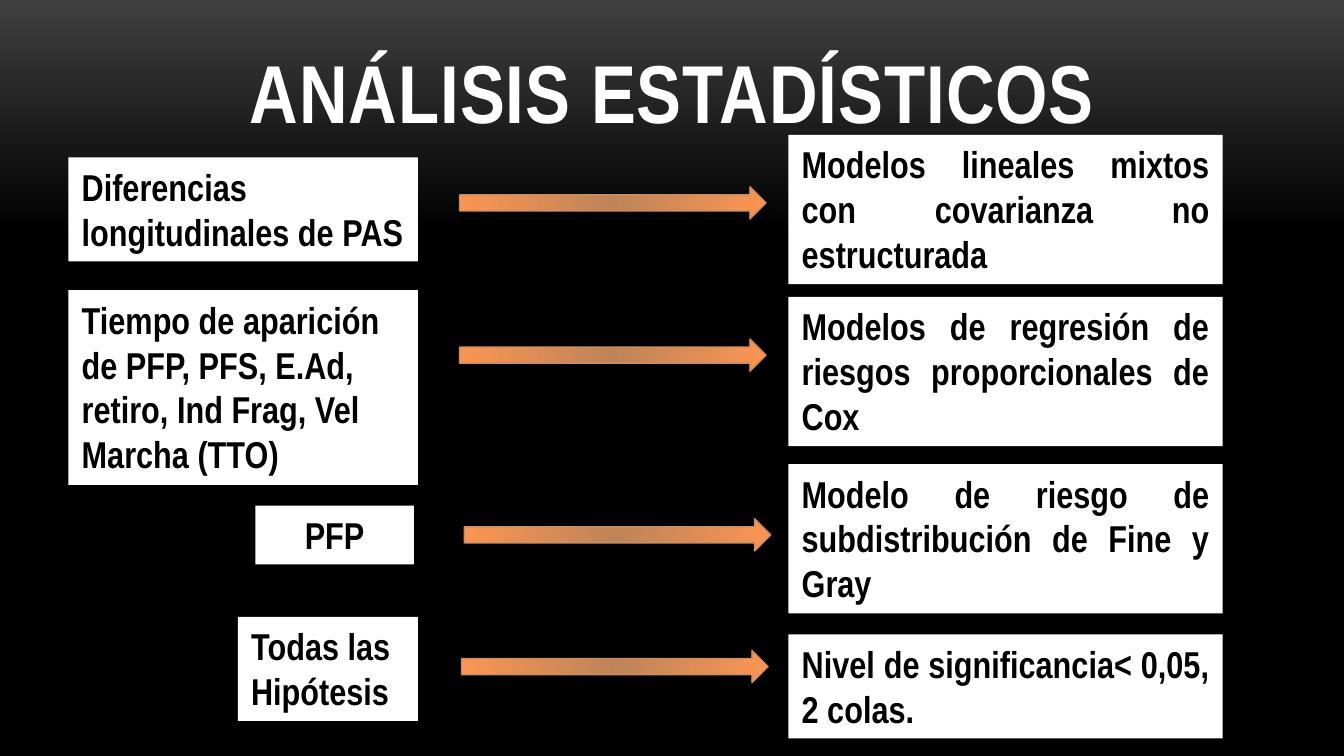
"""Slide that pairs each study outcome with its statistical model."""
from dataclasses import dataclass

import lxml.etree
import pptx
import pptx.dml.color
import pptx.enum.shapes
import pptx.enum.text
import pptx.oxml
import pptx.oxml.ns
import pptx.util

ALIGN = pptx.enum.text.PP_ALIGN
ANCHOR = pptx.enum.text.MSO_ANCHOR
SHAPE = pptx.enum.shapes.MSO_SHAPE


@dataclass(frozen=True)
class Theme:
    """Colours, type sizes and grid of the deck."""
    font: str = "Arial Narrow"
    title_size: int = 44
    body_size: int = 20
    paper: str = "FFFFFF"
    ink: str = "000000"
    edge: str = "CC8E60"
    backdrop: tuple = ((0, "3F3F3F"), (31, "000000"), (100, "000000"))
    glow: tuple = ((0, "BE8459"), (100, "FC9553"))
    columns: float = 100
    rows: float = 56.25


THEME = Theme()
CELL = pptx.util.Inches(10) / THEME.columns
CARD_LEFT, CARD_RIGHT = 5.1, 31.1
MODEL_LEFT, MODEL_WIDTH = 58.67, 32.3
ARROW_WIDTH, ARROW_HEIGHT = 22.8, 2.4


def grid(*cells):
    """Turn grid cells into slide lengths."""
    return [pptx.util.Emu(round(cell * CELL)) for cell in cells]


def rgb(code):
    """Read a colour from its hexadecimal code."""
    return pptx.dml.color.RGBColor.from_string(code)


def child(parent, tag, **attributes):
    """Append a drawing element to its parent."""
    values = {name: str(value) for name, value in attributes.items()}
    return lxml.etree.SubElement(parent, pptx.oxml.ns.qn("a:" + tag), values)


def paint_gradient(fill, element, stops, circular=False):
    """Fill an element with a downward or circular gradient."""
    fill.gradient()
    gradient = element.find(".//" + pptx.oxml.ns.qn("a:gradFill"))
    for part in list(gradient):
        gradient.remove(part)
    stop_list = child(gradient, "gsLst")
    for position, code in stops:
        stop = child(stop_list, "gs", pos=position * 1000)
        child(stop, "srgbClr", val=code)
    if circular:
        focus = child(gradient, "path", path="circle")
        child(focus, "fillToRect", l=100000, t=100000, r=100000, b=100000)
    else:
        child(gradient, "lin", ang=90 * 60000, scaled=0)


def write(box, text, size, colour, align, anchor):
    """Put one bold paragraph into a box and return its span."""
    frame = box.text_frame
    frame.word_wrap = True
    frame.vertical_anchor = anchor
    frame.text = text
    para = frame.paragraphs[0]
    para.alignment = align
    span = para.runs[0]
    span.font.name = THEME.font
    span.font.size = pptx.util.Pt(size)
    span.font.bold = True
    span.font.color.rgb = rgb(colour)
    return span


def add_title(page, text):
    """Add the centred heading with slightly open letter spacing."""
    box = page.shapes.add_textbox(*grid(6.7, 1.5, 86.7, 9.4))
    span = write(box, text, THEME.title_size, THEME.paper, ALIGN.CENTER, ANCHOR.BOTTOM)
    span.font._element.set("spc", "50")


def add_card(page, left, top, width, lines, text, align):
    """Add a white card as tall as its lines of text."""
    height = 1 + 3.37 * lines
    box = page.shapes.add_shape(SHAPE.RECTANGLE, *grid(left, top, width, height))
    box.shadow.inherit = False
    box.fill.solid()
    box.fill.fore_color.rgb = rgb(THEME.paper)
    box.line.fill.background()
    write(box, text, THEME.body_size, THEME.ink, align, ANCHOR.TOP)
    box.text_frame.auto_size = pptx.enum.text.MSO_AUTO_SIZE.SHAPE_TO_FIT_TEXT


def add_arrow(page, left, top):
    """Add a glowing arrow with a soft shadow below it."""
    arrow = page.shapes.add_shape(
        SHAPE.RIGHT_ARROW, *grid(left, top, ARROW_WIDTH, ARROW_HEIGHT))
    paint_gradient(arrow.fill, arrow.element, THEME.glow, circular=True)
    arrow.line.color.rgb = rgb(THEME.edge)
    arrow.line.width = pptx.util.Pt(0.75)
    arrow.shadow.inherit = False
    effects = arrow.element.find(".//" + pptx.oxml.ns.qn("a:effectLst"))
    shadow = child(effects, "outerShdw", blurRad=pptx.util.Pt(4),
                   dist=pptx.util.Pt(3.4), dir=90 * 60000, rotWithShape=0)
    child(child(shadow, "srgbClr", val=THEME.ink), "alpha", val=40000)


def main():
    """Build the slide and save the deck."""
    deck = pptx.Presentation()
    deck.slide_width, deck.slide_height = grid(THEME.columns, THEME.rows)
    page = deck.slides.add_slide(deck.slide_layouts[6])
    paint_gradient(page.background.fill, page.element, THEME.backdrop)
    add_title(page, "ANÁLISIS ESTADÍSTICOS")

    outcomes = (
        (CARD_LEFT, 11.72, CARD_RIGHT, 2, "Diferencias longitudinales de PAS", ALIGN.LEFT),
        (CARD_LEFT, 21.6, CARD_RIGHT, 4,
         "Tiempo de aparición de PFP, PFS, E.Ad, retiro, Ind Frag, Vel Marcha (TTO)",
         ALIGN.LEFT),
        (19, 37.63, 30.8, 1, "PFP", ALIGN.CENTER),
        (17.7, 45.9, CARD_RIGHT, 2, "Todas las Hipótesis", ALIGN.LEFT),
    )
    arrows = ((34.2, 13.9), (34.2, 25.23), (34.55, 38.6), (34.35, 48.4))
    models = (
        (10.04, 3, "Modelos lineales mixtos con covarianza no estructurada"),
        (22.1, 3, "Modelos de regresión de riesgos proporcionales de Cox"),
        (34.53, 3, "Modelo de riesgo de subdistribución de Fine y Gray"),
        (47.2, 2, "Nivel de significancia< 0,05, 2 colas."),
    )
    for outcome, arrow, model in zip(outcomes, arrows, models):
        left, top, right, lines, text, align = outcome
        add_card(page, left, top, right - left, lines, text, align)
        add_arrow(page, *arrow)
        top, lines, text = model
        add_card(page, MODEL_LEFT, top, MODEL_WIDTH, lines, text, ALIGN.JUSTIFY)
    deck.save("out.pptx")


if __name__ == "__main__":
    main()
